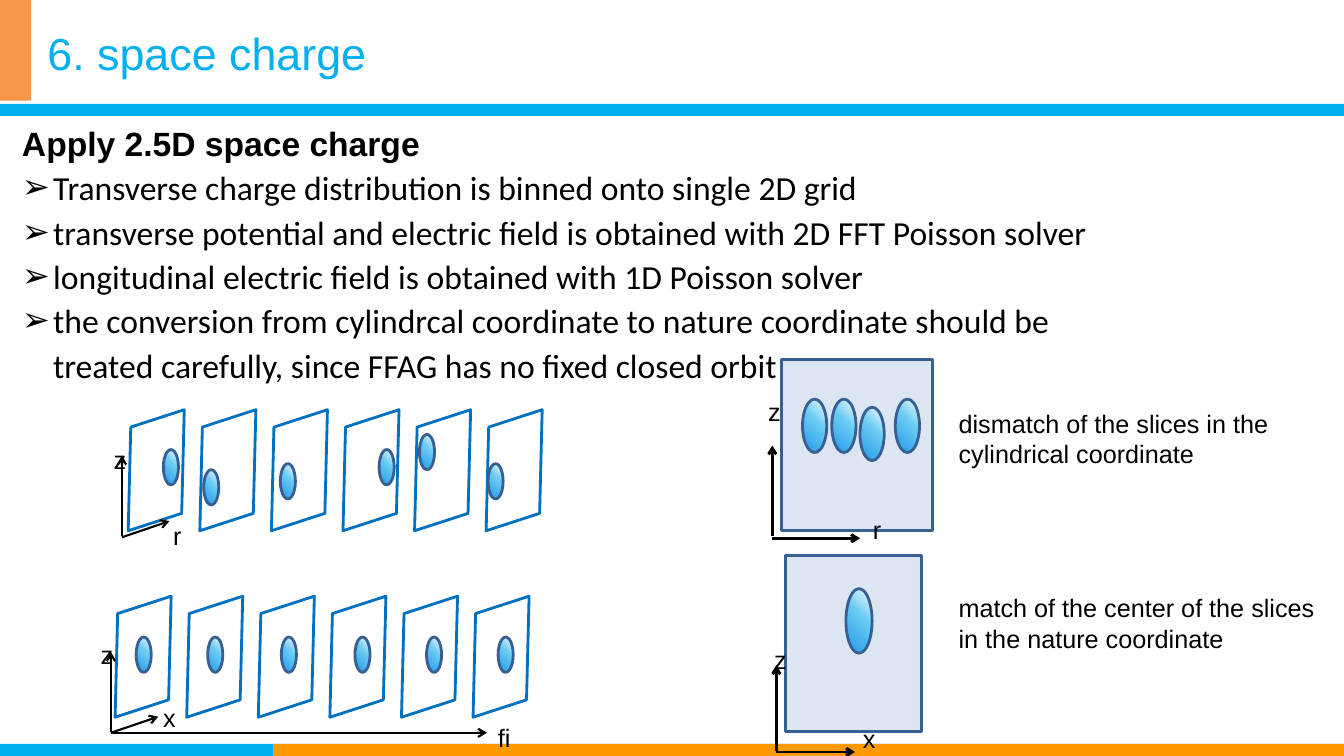
import copy

import lxml.etree
import pptx
import pptx.dml.color
import pptx.enum.shapes
import pptx.enum.text
import pptx.oxml.ns
import pptx.util

PX = 9144  # EMU per px, 100 px to the inch
SHAPE = pptx.enum.shapes.MSO_SHAPE
SLICE_PITCH = 71
BLUE, NAVY, BLACK = "00B0F0", "376092", "000000"
BEAM_STOPS = [(0, "FFFFFF"), (0.42, "6ACCF2"), (1, "2497EA")]
LABEL = {"size": pptx.util.Pt(18), "name": "Arial"}
HEADING = {"size": pptx.util.Pt(24), "name": "Arial", "bold": True}
BULLET = {"size": pptx.util.Pt(24), "name": "Calibri", "bold": False}
TITLE = {"size": pptx.util.Pt(32), "name": "Arial", "bold": False}

BULLETS = [
    "Transverse charge distribution is binned onto single 2D grid",
    "transverse potential and electric field is obtained with 2D FFT Poisson solver",
    "longitudinal electric field is obtained with 1D Poisson solver",
    "the conversion from cylindrcal coordinate to nature coordinate should be "
    "treated carefully, since FFAG has no fixed closed orbit",
]
BARS = [
    ((0, 738, 1333, 12), BLUE),
    ((271, 738, 1062, 12), "FF9900"),
    ((0, 103, 1333, 12), BLUE),
    ((0, 0, 31, 100), "F79646"),
]
NATURE_BEAMS = [(x, 632) for x in (135, 206, 279, 352, 423, 494)]
CYLINDER_BEAMS = [(162, 446), (202, 466), (278, 460), (376, 446), (416, 431), (484, 460)]
SLICE_AXES = [
    (110, 727, 483, 727),
    (110, 727, 157, 711),
    (110, 726, 110, 647),
    (121, 533, 168, 517),
    (121, 532, 121, 452),
]
SLICE_LABELS = [
    ("fi", 484, 712), ("z", 90, 629), ("x", 152, 692), ("z", 103, 436), ("r", 162, 511),
]


def emu(*lengths):
    return [pptx.util.Emu(length * PX) for length in lengths]


def rgb(color):
    return pptx.dml.color.RGBColor.from_string(color)


def set_all(target, values):
    for name, value in values.items():
        setattr(target, name, value)


def add_run(paragraph, text, font, color=BLACK):
    run = paragraph.add_run()
    run.text = text
    set_all(run.font, font)
    run.font.color.rgb = rgb(color)


def set_title(slide, text, box):
    title = slide.shapes.title
    set_all(title, dict(zip(("left", "top", "width", "height"), emu(*box))))
    set_all(title.text_frame, {
        "word_wrap": True,
        "auto_size": pptx.enum.text.MSO_AUTO_SIZE.NONE,
        "vertical_anchor": pptx.enum.text.MSO_ANCHOR.TOP,
    })
    paragraph = title.text_frame.paragraphs[0]
    paragraph.alignment = pptx.enum.text.PP_ALIGN.LEFT
    add_run(paragraph, text, TITLE, BLUE)


def add_text(slide, text, box, font=LABEL):
    frame = slide.shapes.add_textbox(*emu(*box)).text_frame
    frame.word_wrap = True
    add_run(frame.paragraphs[0], text, font)
    return frame


def add_bullet(frame, text):
    paragraph = frame.add_paragraph()
    paragraph.line_spacing = 1.1
    properties = paragraph._p.get_or_add_pPr()
    indent = emu(31)[0]
    properties.set("marL", str(indent))
    properties.set("indent", str(-indent))
    for tag, key, value in (("a:buFont", "typeface", "Arial"), ("a:buChar", "char", "➢")):
        lxml.etree.SubElement(properties, pptx.oxml.ns.qn(tag)).set(key, value)
    add_run(paragraph, text, BULLET)


def add_shape(slide, kind, box, fill=None, line=None):
    shape = slide.shapes.add_shape(kind, *emu(*box))
    shape.shadow.inherit = False
    if fill:
        shape.fill.solid()
        shape.fill.fore_color.rgb = rgb(fill)
    else:
        shape.fill.background()
    if line:
        shape.line.color.rgb = rgb(line)
        shape.line.width = pptx.util.Pt(2)
    else:
        shape.line.fill.background()
    return shape


def add_beam(slide, box):
    """Draw the beam cross-section: an ellipse with a three-stop gradient."""
    beam = add_shape(slide, SHAPE.OVAL, box, line=NAVY)
    beam.fill.gradient()
    stop_list = beam._element.spPr.find(".//" + pptx.oxml.ns.qn("a:gsLst"))
    stop_list.append(copy.deepcopy(stop_list[-1]))
    for stop, (position, color) in zip(beam.fill.gradient_stops, BEAM_STOPS):
        stop.position = position
        stop.color.rgb = rgb(color)
    beam.fill.gradient_angle = 225


def add_arrow(slide, ends, width=2):
    arrow = slide.shapes.add_connector(pptx.enum.shapes.MSO_CONNECTOR.STRAIGHT, *emu(*ends))
    arrow.line.color.rgb = rgb(BLACK)
    arrow.line.width = pptx.util.Pt(width)
    properties = arrow._element.spPr
    outline = properties.find(pptx.oxml.ns.qn("a:ln"))
    lxml.etree.SubElement(outline, pptx.oxml.ns.qn("a:tailEnd")).set("type", "arrow")
    lxml.etree.SubElement(properties, pptx.oxml.ns.qn("a:effectLst"))


def add_slice_row(slide, left, top, beams):
    for index in range(len(beams)):
        box = (left + index * SLICE_PITCH, top, 90, 97)
        plane = add_shape(slide, SHAPE.PARALLELOGRAM, box, line="0070C0")
        plane.adjustments[0] = 0.38
        plane.rotation = 342
    for x, y in beams:
        add_beam(slide, (x, y, 15, 35))


def add_projection(slide, panel, beams, arrows, labels):
    """Draw the end-on view of the slices with its two axes."""
    add_shape(slide, SHAPE.RECTANGLE, panel, "DCE6F2", NAVY)
    for beam in beams:
        add_beam(slide, beam)
    for ends in arrows:
        add_arrow(slide, ends)
    for text, x, y in labels:
        add_text(slide, text, (x, y, 50, 40))


def main():
    presentation = pptx.Presentation()
    presentation.slide_width, presentation.slide_height = emu(1333, 750)
    slide = presentation.slides.add_slide(presentation.slide_layouts[5])

    for box, color in BARS:
        add_shape(slide, SHAPE.RECTANGLE, box, color)
    set_title(slide, "6. space charge", (37, 20, 400, 64))
    body = add_text(slide, "Apply 2.5D space charge", (12, 117, 1127, 272), HEADING)
    for text in BULLETS:
        add_bullet(body, text)

    add_slice_row(slide, 97, 603, NATURE_BEAMS)
    add_slice_row(slide, 110, 418, CYLINDER_BEAMS)
    for ends in SLICE_AXES:
        add_arrow(slide, ends, 1.5)
    for text, x, y in SLICE_LABELS:
        add_text(slide, text, (x, y, 46, 40))

    add_projection(
        slide, (775, 357, 150, 169),
        [(x, y, 24, 53) for x, y in ((888, 396), (853, 404), (796, 396), (825, 396))],
        [(766, 534, 853, 534), (766, 532, 766, 442)],
        [("r", 856, 505), ("z", 752, 388)])
    add_projection(
        slide, (779, 551, 135, 175),
        [(839, 584, 26, 64)],
        [(770, 746, 848, 746), (770, 745, 770, 660)],
        [("x", 846, 713), ("z", 758, 634)])

    add_text(slide, "dismatch of the slices in the cylindrical coordinate", (941, 400, 376, 76))
    add_text(slide, "match of the center of the slices in the nature coordinate",
             (941, 583, 376, 71))
    presentation.save("out.pptx")


if __name__ == "__main__":
    main()
